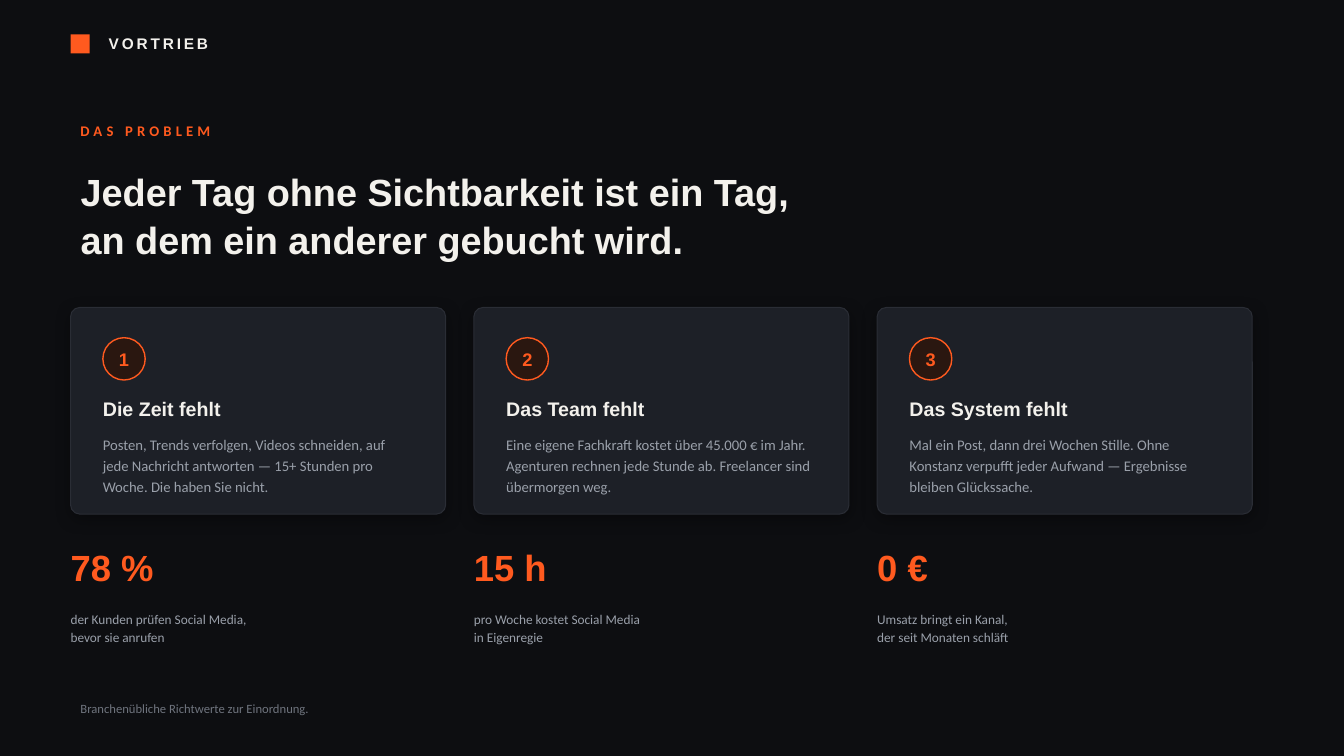
from collections import namedtuple
from dataclasses import dataclass

from lxml import etree
from pptx import Presentation
from pptx.dml.color import RGBColor
from pptx.enum.shapes import MSO_SHAPE
from pptx.enum.text import MSO_ANCHOR, MSO_AUTO_SIZE, PP_ALIGN
from pptx.oxml.ns import qn
from pptx.util import Inches, Pt

RECT, ROUND, OVAL = MSO_SHAPE.RECTANGLE, MSO_SHAPE.ROUNDED_RECTANGLE, MSO_SHAPE.OVAL
MIDDLE, FIXED = MSO_ANCHOR.MIDDLE, MSO_AUTO_SIZE.NONE
LEFT, CENTER = PP_ALIGN.LEFT, PP_ALIGN.CENTER
TITLE_ONLY = 5

WIDE, HIGH = 13.33, 7.5
EDGE, COL, GAP = 0.7, 3.72, 0.28
PAD = 0.32

Box = namedtuple("Box", "x y w h")


def style(size, color, font="Calibri", bold=False, track=0, lead=None, align=LEFT):
    return dict(size=size, color=color, font=font, bold=bold,
                track=track, lead=lead, align=align)


@dataclass(frozen=True)
class Theme:
    back = "0D0E11"
    panel = "1D2027"
    rim = "2A2D35"
    glow = "2A1710"
    hot = "FF5A1F"
    light = "F3F1EC"
    soft = "9AA0AA"
    brand = style(11, light, "Arial", True, track=2)
    kicker = style(10.5, hot, bold=True, track=3)
    title = style(27, light, "Arial", True, lead=1.05)
    badge = style(13, hot, "Arial", True, align=CENTER)
    head = style(14, light, "Arial", True)
    body = style(10.5, soft, lead=1.2)
    figure = style(26, hot, "Arial", True)
    label = style(9.5, soft, lead=1.15)
    note = style(9, "6F747E")


THEME = Theme()

ITEMS = [
    ("Die Zeit fehlt",
     "Posten, Trends verfolgen, Videos schneiden, auf jede Nachricht antworten "
     "— 15+ Stunden pro Woche. Die haben Sie nicht.",
     "78 %", "der Kunden prüfen Social Media,\nbevor sie anrufen"),
    ("Das Team fehlt",
     "Eine eigene Fachkraft kostet über 45.000 € im Jahr. Agenturen rechnen "
     "jede Stunde ab. Freelancer sind übermorgen weg.",
     "15 h", "pro Woche kostet Social Media\nin Eigenregie"),
    ("Das System fehlt",
     "Mal ein Post, dann drei Wochen Stille. Ohne Konstanz verpufft jeder "
     "Aufwand — Ergebnisse bleiben Glückssache.",
     "0 €", "Umsatz bringt ein Kanal,\nder seit Monaten schläft"),
]


def rgb(code):
    return RGBColor.from_string(code)


def inches(box):
    return [Inches(n) for n in box]


def write(frame, text, look, inset=True):
    """Fill a text frame, one paragraph for each line of text."""
    frame.word_wrap = True
    frame.auto_size = FIXED
    frame.vertical_anchor = MIDDLE
    if not inset:
        for side in ("left", "top", "right", "bottom"):
            setattr(frame, f"margin_{side}", 0)
    for i, line in enumerate(text.split("\n")):
        para = frame.add_paragraph() if i else frame.paragraphs[0]
        para.alignment = look["align"]
        if look["lead"]:
            para.line_spacing = look["lead"]
        run = para.add_run()
        run.text = line
        values = {"size": Pt(look["size"]), "name": look["font"], "bold": look["bold"]}
        for key, value in values.items():
            setattr(run.font, key, value)
        run.font.color.rgb = rgb(look["color"])
        if look["track"]:
            run.font._element.set("spc", str(look["track"] * 100))


def label(slide, box, text, look, inset=False):
    write(slide.shapes.add_textbox(*inches(box)).text_frame, text, look, inset)


def shape(slide, kind, box, fill, line=None, width=1):
    item = slide.shapes.add_shape(kind, *inches(box))
    item.shadow.inherit = False
    item.fill.solid()
    item.fill.fore_color.rgb = rgb(fill)
    if line:
        item.line.color.rgb = rgb(line)
        item.line.width = Pt(width)
    else:
        item.line.fill.background()
    return item


def shade(item):
    """Cast a soft black shadow straight down."""
    effects = item._element.spPr.find(qn("a:effectLst"))
    outer = etree.SubElement(effects, qn("a:outerShdw"), blurRad=str(Pt(12)),
                             dist=str(Pt(3)), dir="5400000", rotWithShape="0")
    color = etree.SubElement(outer, qn("a:srgbClr"), val="000000")
    etree.SubElement(color, qn("a:alpha"), val="35000")


def header(slide, box):
    side = 0.19
    shape(slide, RECT, Box(box.x, box.y + 0.08, side, side), THEME.hot)
    label(slide, Box(box.x + 0.28, box.y, 3, box.h), "VORTRIEB", THEME.brand, True)


def heading(slide, box):
    label(slide, Box(box.x, box.y, 8, 0.3), "DAS PROBLEM", THEME.kicker, True)
    title = slide.shapes.title
    place = inches(Box(box.x, box.y + 0.4, box.w, box.h - 0.4))
    for key, value in zip(("left", "top", "width", "height"), place):
        setattr(title, key, value)
    write(title.text_frame, "Jeder Tag ohne Sichtbarkeit ist ein Tag,\n"
          "an dem ein anderer gebucht wird.", THEME.title)


def card(slide, box, number, head, body):
    panel = shape(slide, ROUND, box, THEME.panel, THEME.rim, 0.75)
    panel.adjustments[0] = 0.044
    shade(panel)
    x, w = box.x + PAD, box.w - 2 * PAD
    spot = Box(x, box.y + 0.3, 0.42, 0.42)
    disc = shape(slide, OVAL, spot, THEME.glow, THEME.hot)
    write(disc.text_frame, str(number), THEME.badge, False)
    label(slide, Box(x, box.y + 0.83, w, 0.34), head, THEME.head)
    label(slide, Box(x, box.y + 1.19, w, 0.72), body, THEME.body)


def stat(slide, box, figure, text):
    label(slide, Box(box.x, box.y, box.w, 0.55), figure, THEME.figure)
    label(slide, Box(box.x, box.y + 0.57, box.w, 0.6), text, THEME.label)


def main():
    deck = Presentation()
    deck.slide_width, deck.slide_height = Inches(WIDE), Inches(HIGH)
    slide = deck.slides.add_slide(deck.slide_layouts[TITLE_ONLY])
    slide.background.fill.solid()
    slide.background.fill.fore_color.rgb = rgb(THEME.back)

    header(slide, Box(EDGE, 0.26, 3.28, 0.34))
    heading(slide, Box(EDGE, 1.15, 11, 1.55))
    for i, (head, body, figure, text) in enumerate(ITEMS):
        x = EDGE + i * (COL + GAP)
        card(slide, Box(x, 3.05, COL, 2.05), i + 1, head, body)
        stat(slide, Box(x, 5.35, COL, 1.17), figure, text)
    label(slide, Box(EDGE, 6.88, WIDE - 2 * EDGE, 0.3),
          "Branchenübliche Richtwerte zur Einordnung.", THEME.note, True)
    deck.save("out.pptx")


if __name__ == "__main__":
    main()
